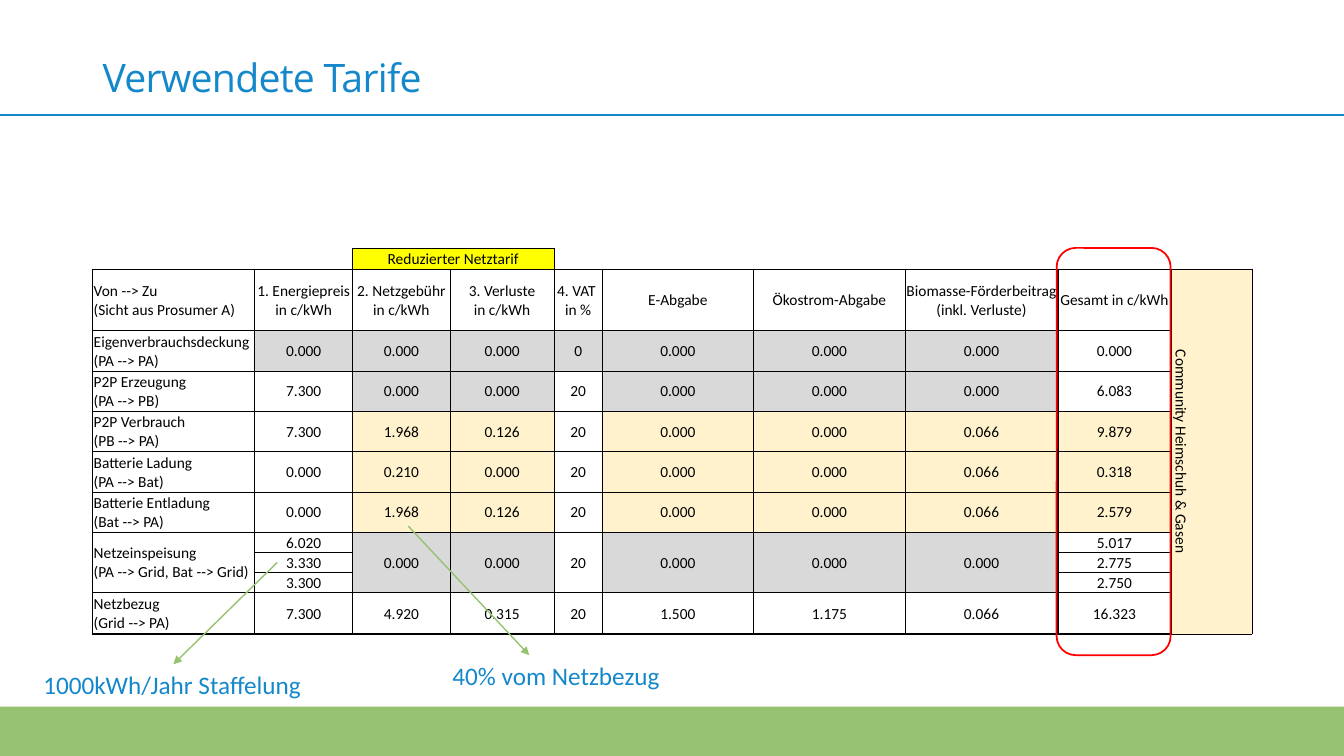
from dataclasses import dataclass

from lxml.etree import SubElement
from pptx import Presentation
from pptx.dml.color import RGBColor
from pptx.enum.shapes import MSO_CONNECTOR, MSO_SHAPE
from pptx.enum.text import MSO_ANCHOR, PP_ALIGN
from pptx.oxml.ns import qn
from pptx.util import Inches, Pt

WIDTH, HEIGHT = Inches(13.33), Inches(7.5)


@dataclass(frozen=True)
class Theme:
    """Colours, fonts and type sizes of the slide."""
    blue: str = "1488CB"
    green: str = "96C271"
    red: str = "FF0000"
    black: str = "000000"
    grey: str = "D9D9D9"
    cream: str = "FFF2CC"
    yellow: str = "FFFF00"
    heading_font: str = "Open Sans"
    body_font: str = "Calibri"
    title_size: int = 28
    note_size: int = 18
    table_size: int = 11


THEME = Theme()
FILLS = {"G": THEME.grey, "C": THEME.cream, "Y": THEME.yellow}
NO_GRID_STYLE = "{2D5ABB26-0587-4C30-8999-92F81FD0307C}"
COLUMN_SHARES = (1.61, 0.97, 0.97, 1.03, 0.48, 1.5, 1.51, 1.51, 1.13, 0.8)
ROW_SHARES = (0.21, 0.61, 0.4, 0.4, 0.4, 0.4, 0.4, 0.2, 0.2, 0.2, 0.41)
VERTICAL_EDGES = (1, 1, *[0.5] * 6, 2, 0.5)
HORIZONTAL_EDGES = (0.5, 1, 1, *[0.5] * 8, 1)
LAST_COLUMN = len(COLUMN_SHARES) - 1
LAST_ROW = len(ROW_SHARES) - 1
FEED_IN_ROW = 7
TARIFFS = (
    ("--Y-------", "", "", "Reduzierter Netztarif"),
    ("---------C", "Von --> Zu \n(Sicht aus Prosumer A)", "1. Energiepreis\nin c/kWh",
     "2. Netzgebühr\nin c/kWh", "3. Verluste\nin c/kWh", "4. VAT \nin %", "E-Abgabe",
     "Ökostrom-Abgabe", "Biomasse-Förderbeitrag (inkl. Verluste)", "Gesamt in c/kWh",
     "Community Heimschuh & Gasen"),
    ("-GGGGGGG--", "Eigenverbrauchsdeckung\n(PA --> PA)",
     "0.000", "0.000", "0.000", "0", "0.000", "0.000", "0.000", "0.000"),
    ("--GG-GGG--", "P2P Erzeugung\n(PA --> PB)",
     "7.300", "0.000", "0.000", "20", "0.000", "0.000", "0.000", "6.083"),
    ("--CC-CCCC-", "P2P Verbrauch\n(PB --> PA)",
     "7.300", "1.968", "0.126", "20", "0.000", "0.000", "0.066", "9.879"),
    ("--CC-CCCC-", "Batterie Ladung\n(PA --> Bat)",
     "0.000", "0.210", "0.000", "20", "0.000", "0.000", "0.066", "0.318"),
    ("--CC-CCCC-", "Batterie Entladung\n(Bat --> PA)",
     "0.000", "1.968", "0.126", "20", "0.000", "0.000", "0.066", "2.579"),
    ("--GG-GGG--", "Netzeinspeisung\n(PA --> Grid, Bat --> Grid)",
     "6.020", "0.000", "0.000", "20", "0.000", "0.000", "0.000", "5.017"),
    ("----------", "", "3.330", "", "", "", "", "", "", "2.775"),
    ("----------", "", "3.300", "", "", "", "", "", "", "2.750"),
    ("----------", "Netzbezug\n(Grid --> PA)",
     "7.300", "4.920", "0.315", "20", "1.500", "1.175", "0.066", "16.323"),
)


def area(*shares):
    """Turn alternating percentages of slide width and height into lengths."""
    return [round((HEIGHT if index % 2 else WIDTH) * share / 100)
            for index, share in enumerate(shares)]


def write(frame, text, size, color=THEME.black, font=THEME.body_font,
          align=PP_ALIGN.LEFT, anchor=MSO_ANCHOR.TOP, wrap=True, spacing=None):
    """Write one formatted paragraph into a text frame."""
    frame.word_wrap = wrap
    frame.vertical_anchor = anchor
    para = frame.paragraphs[0]
    para.alignment = align
    if not text:
        SubElement(para._p, qn("a:endParaRPr"), sz=str(size * 100))
    for index, line in enumerate(text.split("\n") if text else ()):
        if index:
            para.add_line_break()
        span = para.add_run()
        span.text = line
        span.font.size = Pt(size)
        span.font.name = font
        span.font.color.rgb = RGBColor.from_string(color)
        if spacing:
            span.font._element.set("spc", str(spacing))


def add_text(page, place, text, **style):
    """Add a text box."""
    box = page.shapes.add_textbox(*area(*place))
    write(box.text_frame, text, **style)
    return box


def add_box(page, kind, place, fill=None, line=None):
    """Add a shape with an optional fill and outline."""
    box = page.shapes.add_shape(kind, *area(*place))
    box.shadow.inherit = False
    if fill:
        box.fill.solid()
        box.fill.fore_color.rgb = RGBColor.from_string(fill)
    else:
        box.fill.background()
    if line:
        box.line.color.rgb = RGBColor.from_string(line)
        box.line.width = Pt(1.25)
    else:
        box.line.fill.background()


def add_line(page, ends, color, arrow=False):
    """Add a straight line, with an arrowhead at its end on request."""
    line = page.shapes.add_connector(MSO_CONNECTOR.STRAIGHT, *area(*ends))
    line.line.color.rgb = RGBColor.from_string(color)
    line.line.width = Pt(1)
    if arrow:
        SubElement(line.line._get_or_add_ln(), qn("a:tailEnd"), type="triangle")
    SubElement(line._element.spPr, qn("a:effectLst"))


def edge_weights(row, column):
    """Return the border widths of a cell by side."""
    if column == LAST_COLUMN:
        return dict.fromkeys("LRTB" if row else "B", 0.5)
    if row == 0 and column != 2:
        return {"B": 1}
    return {"L": VERTICAL_EDGES[column], "R": VERTICAL_EDGES[column + 1],
            "T": HORIZONTAL_EDGES[row], "B": HORIZONTAL_EDGES[row + 1]}


def add_borders(cell, weights):
    """Draw black borders of the given widths on a cell."""
    properties = cell._tc.get_or_add_tcPr()
    for side, weight in weights.items():
        line = SubElement(properties, qn(f"a:ln{side}"), w=str(Pt(weight)))
        fill = SubElement(line, qn("a:solidFill"))
        SubElement(fill, qn("a:srgbClr"), val=THEME.black)


def format_cell(cell, row, column, text, code):
    """Write, border and fill one tariff cell."""
    cell.margin_left = cell.margin_right = cell.margin_top = Inches(0.01)
    cell.margin_bottom = 0
    write(cell.text_frame, text, THEME.table_size,
          align=PP_ALIGN.CENTER if column else PP_ALIGN.LEFT)
    cell.vertical_anchor = MSO_ANCHOR.MIDDLE if row else MSO_ANCHOR.BOTTOM
    if not cell.is_spanned:
        add_borders(cell, edge_weights(row, column))
    if code in FILLS:
        cell.fill.solid()
        cell.fill.fore_color.rgb = RGBColor.from_string(FILLS[code])
    else:
        cell.fill.background()


def add_tariff_table(page, place):
    """Add the table of tariffs with its merged cells."""
    left, top, width, height = area(*place)
    table = page.shapes.add_table(len(ROW_SHARES), len(COLUMN_SHARES),
                                  left, top, width, height).table
    table.first_row = table.horz_banding = False
    table._tbl.tblPr.find(qn("a:tableStyleId")).text = NO_GRID_STYLE
    for column, share in zip(table.columns, COLUMN_SHARES):
        column.width = round(width * share / sum(COLUMN_SHARES))
    for row, share in zip(table.rows, ROW_SHARES):
        row.height = round(height * share / sum(ROW_SHARES))
    table.cell(0, 2).merge(table.cell(0, 3))
    table.cell(1, LAST_COLUMN).merge(table.cell(LAST_ROW, LAST_COLUMN))
    for column in (0, *range(2, 8)):
        table.cell(FEED_IN_ROW, column).merge(table.cell(FEED_IN_ROW + 2, column))
    for row, (codes, *texts) in enumerate(TARIFFS):
        texts += [""] * (len(codes) - len(texts))
        for column, (text, code) in enumerate(zip(texts, codes)):
            format_cell(table.cell(row, column), row, column, text, code)
    table.cell(1, LAST_COLUMN)._tc.get_or_add_tcPr().set("vert", "vert")


def main():
    """Build the tariff slide and save the deck."""
    deck = Presentation()
    deck.slide_width, deck.slide_height = WIDTH, HEIGHT
    page = deck.slides.add_slide(deck.slide_layouts[6])
    add_box(page, MSO_SHAPE.RECTANGLE, (0, 93.47, 100, 6.53), fill=THEME.green)
    add_line(page, (0, 15.2, 100, 15.2), THEME.blue)
    title = add_text(page, (6.9, 6.4, 86.27, 19.33), "Verwendete Tarife", size=THEME.title_size,
                     color=THEME.blue, font=THEME.heading_font, spacing=-50)
    title.text_frame.margin_bottom = 0
    add_tariff_table(page, (6.9, 32.8, 86.27, 51.07))
    note = {"size": THEME.note_size, "color": THEME.blue, "wrap": False}
    add_line(page, (30.38, 69.6, 39.38, 86.67), THEME.green, arrow=True)
    add_text(page, (32.93, 86.67, 17.1, 5.33), "40% vom Netzbezug", **note)
    add_line(page, (20.63, 74.4, 12.9, 87.87), THEME.green, arrow=True)
    add_text(page, (2.48, 87.87, 20.93, 5.33), "1000kWh/Jahr Staffelung", **note)
    add_box(page, MSO_SHAPE.ROUNDED_RECTANGLE, (78.62, 32.8, 8.48, 53.87), line=THEME.red)
    deck.save("out.pptx")


if __name__ == "__main__":
    main()
